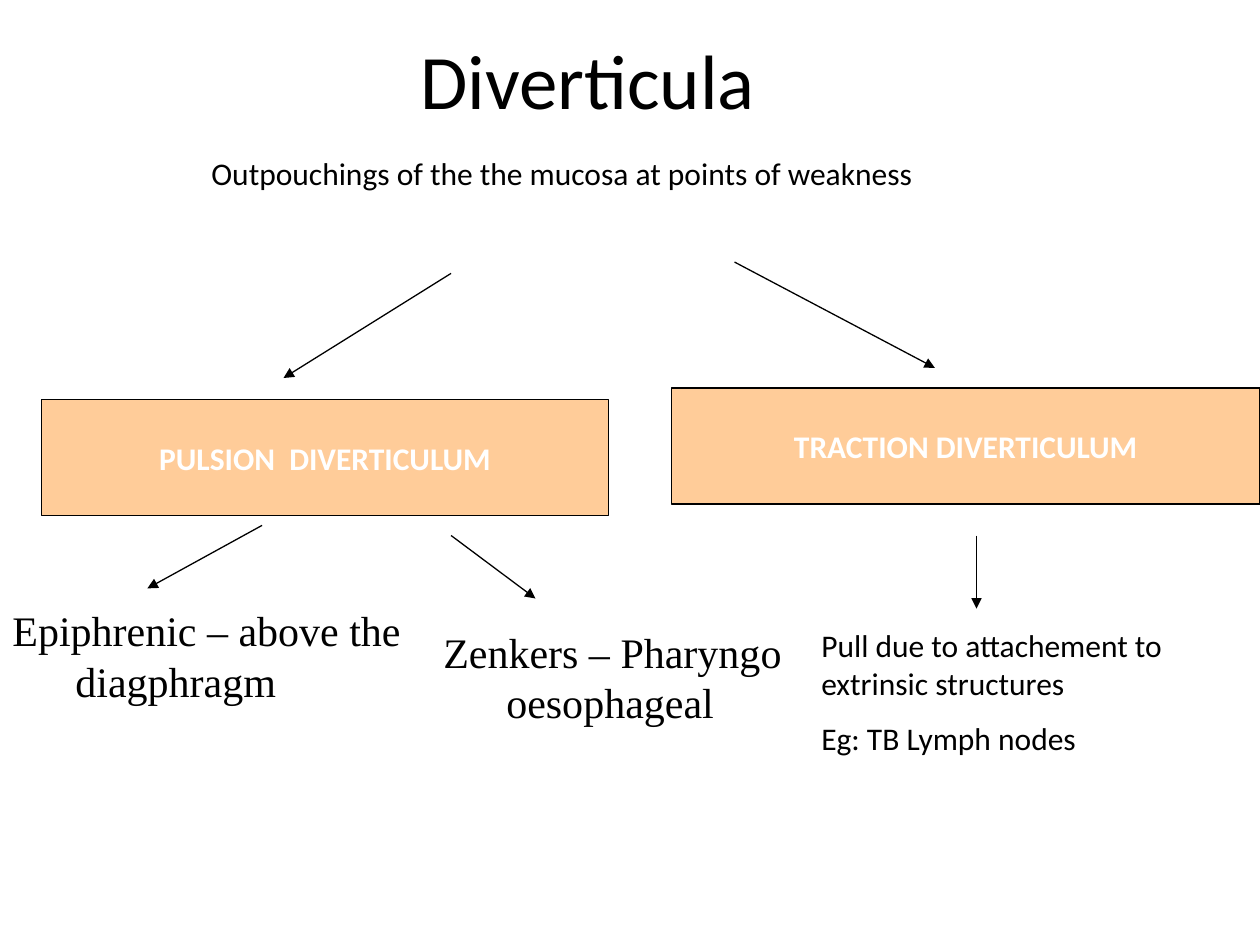
from pptx import Presentation
from pptx.dml.color import RGBColor
from pptx.enum.shapes import MSO_CONNECTOR as Connector, MSO_SHAPE as Preset
from pptx.enum.text import MSO_ANCHOR as Anchor, PP_ALIGN as Align
from pptx.oxml.ns import qn
from pptx.util import Inches, Pt
from lxml.etree import SubElement

BLACK = RGBColor(0x00, 0x00, 0x00)
WHITE = RGBColor(0xFF, 0xFF, 0xFF)
PEACH = RGBColor(0xFF, 0xCC, 0x99)


class DiagramSlide:
    sans = "Calibri"
    serif = "Times New Roman"
    line_width = Pt(0.75)
    body_size = 18

    def __init__(self, slide):
        self.slide = slide

    def style(self, paragraph, size, font=sans, color=BLACK, bold=False):
        paragraph.font.size = Pt(size)
        paragraph.font.name = font
        paragraph.font.color.rgb = color
        paragraph.font.bold = bold

    def text(self, box, lines, size=body_size, font=sans, align=Align.LEFT,
             anchor=Anchor.TOP, hanging=0):
        frame = self.slide.shapes.add_textbox(*map(Inches, box)).text_frame
        frame.word_wrap = True
        frame.vertical_anchor = anchor
        frame.text = "\n".join(lines)
        for number, paragraph in enumerate(frame.paragraphs):
            paragraph.alignment = align
            self.style(paragraph, size, font)
            if number:
                paragraph.space_before = Pt(10)
            if hanging:
                properties = paragraph._p.get_or_add_pPr()
                properties.set("marL", str(Inches(hanging)))
                properties.set("indent", str(-Inches(hanging)))

    def category(self, box, label):
        rectangle = self.slide.shapes.add_shape(Preset.RECTANGLE, *map(Inches, box))
        rectangle.shadow.inherit = False
        rectangle.fill.solid()
        rectangle.fill.fore_color.rgb = PEACH
        rectangle.line.color.rgb = BLACK
        rectangle.line.width = self.line_width
        frame = rectangle.text_frame
        frame.word_wrap = False
        frame.vertical_anchor = Anchor.MIDDLE
        frame.text = label
        paragraph = frame.paragraphs[0]
        paragraph.alignment = Align.CENTER
        self.style(paragraph, self.body_size, color=WHITE, bold=True)

    def arrow(self, start, end):
        connector = self.slide.shapes.add_connector(
            Connector.STRAIGHT, *map(Inches, start + end))
        connector.line.color.rgb = BLACK
        connector.line.width = self.line_width
        SubElement(connector.line._get_or_add_ln(), qn("a:tailEnd"), type="triangle")
        SubElement(connector._element.spPr, qn("a:effectLst"))


def main():
    deck = Presentation()
    deck.slide_width, deck.slide_height = Inches(10), Inches(7.5)
    diagram = DiagramSlide(deck.slides.add_slide(deck.slide_layouts[6]))

    # Title and definition
    diagram.text((2.33, 0, 4.67, 1.25), ["Diverticula"], size=44,
                 align=Align.CENTER, anchor=Anchor.MIDDLE)
    diagram.text((1.58, 1.17, 7.67, 0.5),
                 ["Outpouchings of the the mucosa at points of weakness"])

    # Two types
    diagram.arrow((3.58, 2.17), (2.25, 3))
    diagram.arrow((5.83, 2.08), (7.42, 2.92))
    diagram.category((0.33, 3.17, 4.5, 0.92), "PULSION  DIVERTICULUM")
    diagram.category((5.33, 3.08, 4.67, 0.92), "TRACTION DIVERTICULUM")

    # Pulsion examples
    diagram.arrow((2.08, 4.17), (1.17, 4.67))
    diagram.arrow((3.58, 4.25), (4.25, 4.75))
    for box, example in (
        ((0, 4.75, 3.42, 0.9), "Epiphrenic – above the diagphragm"),
        ((3.42, 4.92, 3.5, 1.5), "Zenkers – Pharyngo oesophageal"),
    ):
        diagram.text(box, [example], size=24, font=diagram.serif, hanging=0.5)

    # Traction cause
    diagram.arrow((7.75, 4.25), (7.75, 4.83))
    diagram.text((6.42, 4.92, 3.33, 1.5),
                 ["Pull due to attachement to extrinsic structures",
                  "Eg: TB Lymph nodes"])

    deck.save("out.pptx")


if __name__ == "__main__":
    main()
